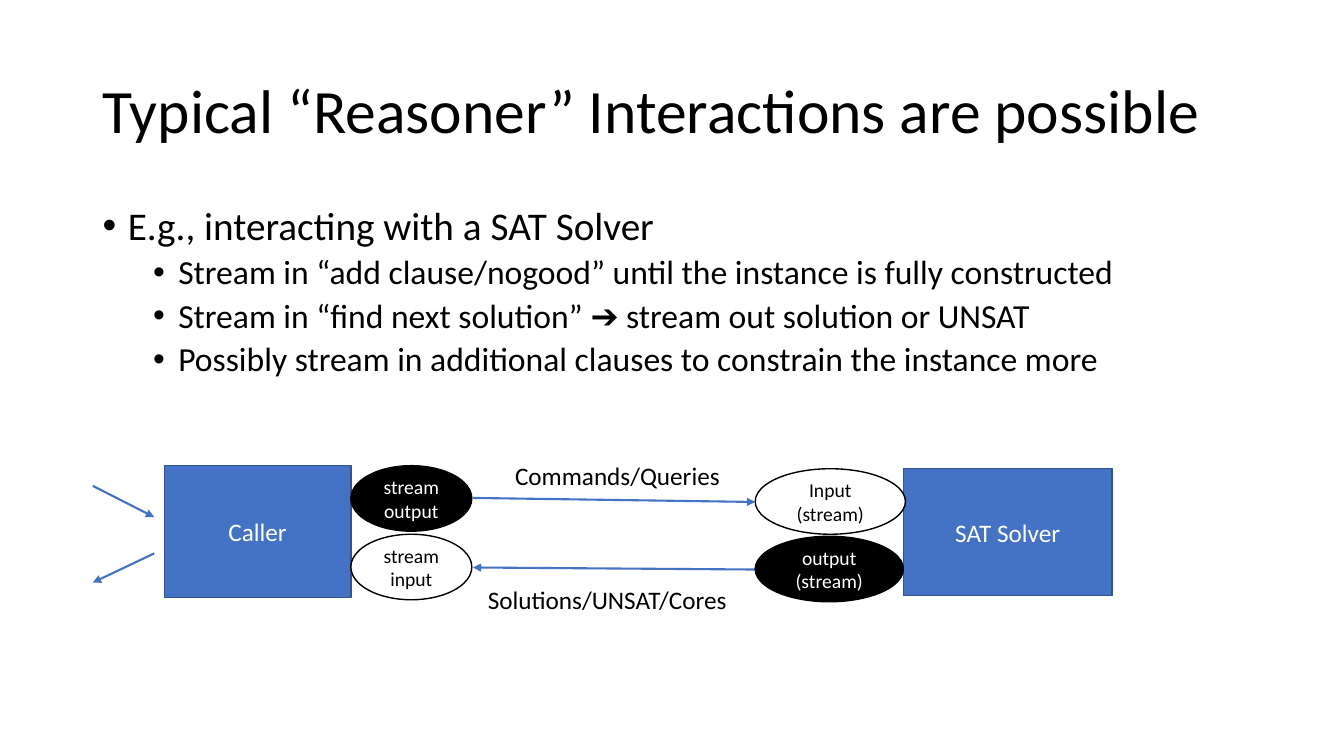
from lxml import etree
from pptx import Presentation
from pptx.dml.color import RGBColor
from pptx.enum import shapes, text
from pptx.oxml.ns import qn
from pptx.util import Inches, Pt

BLACK = RGBColor(0x00, 0x00, 0x00)
WHITE = RGBColor(0xFF, 0xFF, 0xFF)
BLUE = RGBColor(0x44, 0x72, 0xC4)
DARK_BLUE = RGBColor(0x32, 0x54, 0x91)
FONT = "Calibri"
PORT_H = 0.65

TITLE = "Typical “Reasoner” Interactions are possible"
# (level, text)
POINTS = [
    (0, "E.g., interacting with a SAT Solver"),
    (1, "Stream in “add clause/nogood” until the instance is fully constructed"),
    (1, "Stream in “find next solution” ➔ stream out solution or UNSAT"),
    (1, "Possibly stream in additional clauses to constrain the instance more"),
]


def style(p, size, color):
    p.font.name = FONT
    p.font.size = Pt(size)
    p.font.color.rgb = color


def add_text(slide, box, content, size, anchor=text.MSO_ANCHOR.TOP):
    tf = slide.shapes.add_textbox(*map(Inches, box)).text_frame
    tf.word_wrap = True
    tf.vertical_anchor = anchor
    tf.text = content
    for p in tf.paragraphs:
        style(p, size, BLACK)
    return tf


def add_node(slide, kind, box, label, size, fill, line, color):
    sp = slide.shapes.add_shape(kind, *map(Inches, box))
    sp.shadow.inherit = False
    sp.fill.solid()
    sp.fill.fore_color.rgb = fill
    sp.line.color.rgb = line
    sp.line.width = Pt(1)
    tf = sp.text_frame
    tf.word_wrap = True
    tf.vertical_anchor = text.MSO_ANCHOR.MIDDLE
    tf.text = label
    for p in tf.paragraphs:
        p.alignment = text.PP_ALIGN.CENTER
        style(p, size, color)


def add_arrow(slide, start, end):
    cx = slide.shapes.add_connector(
        shapes.MSO_CONNECTOR.STRAIGHT, *map(Inches, start + end))
    cx.line.color.rgb = BLUE
    cx.line.width = Pt(1.5)
    etree.SubElement(cx.line._get_or_add_ln(), qn("a:tailEnd"), type="triangle")
    etree.SubElement(cx._element.spPr, qn("a:effectLst"))


def add_title(slide, box):
    tf = add_text(slide, box, TITLE, 44, text.MSO_ANCHOR.MIDDLE)
    tf.paragraphs[0].line_spacing = 0.9


def add_points(slide, box):
    tf = add_text(slide, box, "\n".join(t for _, t in POINTS), 24)
    for p, (level, _) in zip(tf.paragraphs, POINTS):
        p.level = level
        p.line_spacing = 0.9
        p.space_before = Pt(5 if level else 10)
        p.font.size = Pt(24 if level else 28)
        pPr = p._p.get_or_add_pPr()
        pPr.set("marL", str(Inches(0.25 + 0.5 * level)))
        pPr.set("indent", str(Inches(-0.25)))
        # The bullet follows the spacing and precedes the font settings
        font = etree.Element(qn("a:buFont"), typeface="Arial")
        bullet = etree.Element(qn("a:buChar"), char="•")
        pPr.find(qn("a:defRPr")).addprevious(font)
        font.addnext(bullet)


def add_party(slide, box, label, ports):
    """A block with stream ports; each port is (dx, dy, width, label, filled)."""
    left, top = box[:2]
    add_node(slide, shapes.MSO_SHAPE.RECTANGLE, box, label, 18,
             BLUE, DARK_BLUE, WHITE)
    for dx, dy, width, port, filled in ports:
        fill, color = (BLACK, WHITE) if filled else (WHITE, BLACK)
        add_node(slide, shapes.MSO_SHAPE.OVAL,
                 (left + dx, top + dy, width, PORT_H), port, 14,
                 fill, BLACK, color)


def add_diagram(slide, box):
    x, y = box[:2]
    # Streams between the two parties
    add_arrow(slide, (x + 3.77, y + 0.32), (x + 6.57, y + 0.36))
    add_arrow(slide, (x + 6.57, y + 1.03), (x + 3.77, y + 1.01))
    add_text(slide, (x + 3.82, y + 1.13, 2.75, 0.4), "Solutions/UNSAT/Cores", 18)
    add_text(slide, (x + 4.09, y - 0.1, 2.34, 0.4), "Commands/Queries", 18)
    # Parties
    add_party(slide, (x + 0.71, y, 1.85, 1.31), "Caller", [
        (1.85, 0.68, 1.2, "stream\ninput", False),
        (1.85, 0, 1.2, "stream\noutput", True)])
    add_party(slide, (x + 8.04, y + 0.03, 2.07, 1.26), "SAT Solver", [
        (-1.47, 0, 1.49, "Input\n(stream)", False),
        (-1.47, 0.67, 1.47, "output\v(stream)", True)])
    # Traffic in and out of the caller
    add_arrow(slide, (x, y + 0.2), (x + 0.61, y + 0.51))
    add_arrow(slide, (x + 0.61, y + 0.87), (x, y + 1.16))


def main():
    prs = Presentation()
    prs.slide_width, prs.slide_height = Inches(13.33), Inches(7.5)
    slide = prs.slides.add_slide(prs.slide_layouts[6])
    add_title(slide, (0.92, 0.4, 11.5, 1.45))
    add_points(slide, (0.92, 2, 11.5, 4.76))
    add_diagram(slide, (0.92, 4.62, 10.11, 1.35))
    prs.save("out.pptx")


if __name__ == "__main__":
    main()
